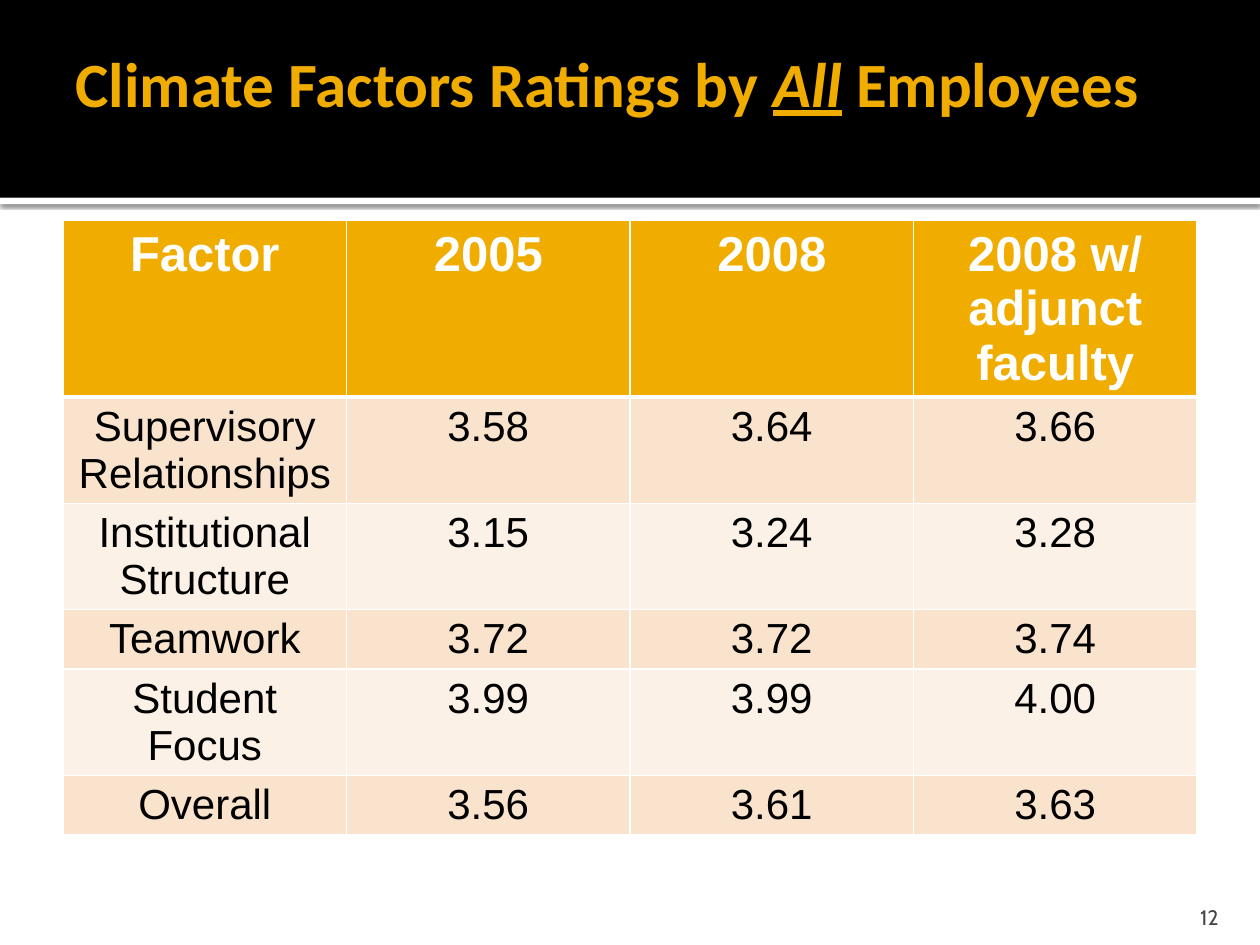
from dataclasses import dataclass

from lxml import etree
from pptx import Presentation
from pptx import util as u
from pptx.dml.color import RGBColor
from pptx.enum import shapes, text
from pptx.oxml import ns


@dataclass(frozen=True)
class Theme:
    black: str = "000000"
    white: str = "FFFFFF"
    gold: str = "F0AD00"
    band_dark: str = "F9E3CC"
    band_light: str = "FCF1E7"
    grey: str = "454545"
    title_font: str = "Calibri"
    table_font: str = "Arial"
    number_font: str = "Cabin"
    title_size: int = 36
    header_size: int = 28
    body_size: int = 24
    number_size: int = 12


TITLE = [("Climate Factors Ratings by ", False), ("All", True), (" Employees", False)]
RATINGS = [
    ("Factor", "2005", "2008", "2008 w/ adjunct faculty"),
    ("Supervisory Relationships", "3.58", "3.64", "3.66"),
    ("Institutional Structure", "3.15", "3.24", "3.28"),
    ("Teamwork", "3.72", "3.72", "3.74"),
    ("Student Focus", "3.99", "3.99", "4.00"),
    ("Overall", "3.56", "3.61", "3.63"),
]
# Row heights in grid units, by the number of text lines
HEADER, DOUBLE, SINGLE = 2.8, 1.68, 0.94
ROW_HEIGHTS = [HEADER, DOUBLE, DOUBLE, SINGLE, DOUBLE, SINGLE]


class SlideBuilder:
    """Places elements on a grid of 20 columns by 15 rows."""

    def __init__(self, deck, theme):
        self.theme = theme
        self.column = deck.slide_width / 20
        self.row = deck.slide_height / 15
        self.slide = deck.slides.add_slide(deck.slide_layouts[5])

    def place(self, column, row, width, height):
        return (round(column * self.column), round(row * self.row),
                round(width * self.column), round(height * self.row))

    def style(self, span, font, size, color, bold=False):
        span.font.name = font
        span.font.size = u.Pt(size)
        span.font.bold = bold
        span.font.color.rgb = RGBColor.from_string(color)

    def set_insets(self, frame, left, top, right, bottom):
        frame.margin_left, frame.margin_top = u.Inches(left), u.Inches(top)
        frame.margin_right, frame.margin_bottom = u.Inches(right), u.Inches(bottom)

    def band(self, area, color, shadow=False):
        box = self.slide.shapes.add_shape(shapes.MSO_SHAPE.RECTANGLE, *self.place(*area))
        box.shadow.inherit = False
        box.fill.solid()
        box.fill.fore_color.rgb = RGBColor.from_string(color)
        box.line.fill.background()
        if shadow:
            effects = box.element.spPr.find(ns.qn("a:effectLst"))
            outer = etree.SubElement(
                effects, ns.qn("a:outerShdw"), blurRad=str(u.Pt(2.5)),
                dist=str(u.Pt(0.8)), dir="5400000", algn="t", rotWithShape="0")
            tint = etree.SubElement(outer, ns.qn("a:srgbClr"), val=self.theme.black)
            etree.SubElement(tint, ns.qn("a:alpha"), val="60000")

    def title(self, area, parts):
        box = self.slide.shapes.title
        box.left, box.top, box.width, box.height = self.place(*area)
        box.element.getparent().append(box.element)  # in front of the bands
        frame = box.text_frame
        frame.word_wrap = True
        frame.auto_size = text.MSO_AUTO_SIZE.NONE
        frame.vertical_anchor = text.MSO_ANCHOR.MIDDLE
        self.set_insets(frame, 0.1, 0.05, 0.05, 0.66)
        para = frame.paragraphs[0]
        para.alignment = text.PP_ALIGN.LEFT
        for words, emphasis in parts:
            span = para.add_run()
            span.text = words
            self.style(span, self.theme.title_font, self.theme.title_size,
                       self.theme.gold, bold=True)
            span.font.italic = span.font.underline = emphasis

    def borders(self, cell, top=1, bottom=1):
        properties = cell._tc.get_or_add_tcPr()
        for side, width in zip("LRTB", (1, 1, top, bottom)):
            line = etree.SubElement(properties, ns.qn(f"a:ln{side}"), w=str(u.Pt(width)))
            fill = etree.SubElement(line, ns.qn("a:solidFill"))
            etree.SubElement(fill, ns.qn("a:srgbClr"), val=self.theme.white)

    def table(self, column, row, width, data, heights):
        theme = self.theme
        area = self.place(column, row, width, sum(heights))
        grid = self.slide.shapes.add_table(len(data), len(data[0]), *area).table
        grid.horz_banding = False
        for index, (values, height) in enumerate(zip(data, heights)):
            grid.rows[index].height = round(height * self.row)
            header = index == 0
            band = theme.band_dark if index % 2 else theme.band_light
            for position, value in enumerate(values):
                cell = grid.cell(index, position)
                self.borders(cell, top=3 if index == 1 else 1, bottom=3 if header else 1)
                cell.fill.solid()
                cell.fill.fore_color.rgb = RGBColor.from_string(theme.gold if header else band)
                cell.text_frame.text = value
                para = cell.text_frame.paragraphs[0]
                para.alignment = text.PP_ALIGN.CENTER
                self.style(para.runs[0], theme.table_font,
                           theme.header_size if header else theme.body_size,
                           theme.white if header else theme.black, bold=header)

    def page_number(self, area, number):
        box = self.slide.shapes.add_textbox(*self.place(*area))
        frame = box.text_frame
        frame.word_wrap = True
        frame.vertical_anchor = text.MSO_ANCHOR.BOTTOM
        self.set_insets(frame, 0.1, 0.05, 0.1, 0)
        frame.text = number
        para = frame.paragraphs[0]
        para.alignment = text.PP_ALIGN.RIGHT
        self.style(para.runs[0], self.theme.number_font, self.theme.number_size, self.theme.grey)


def main():
    deck = Presentation()
    deck.slide_width, deck.slide_height = u.Inches(10), u.Inches(7.5)
    theme = Theme()
    page = SlideBuilder(deck, theme)

    # Header band with a white edge
    page.band((0, 3.14, 20, 0.1), theme.white, shadow=True)
    page.band((0, 0, 20, 3.14), theme.black)
    page.title((1, 0.66, 18, 2.5), TITLE)

    # Ratings and page number
    page.table(1, 3.5, 18, RATINGS, ROW_HEIGHTS)
    page.page_number((17.94, 14.16, 1.6, 0.6), "12")

    deck.save("out.pptx")


if __name__ == "__main__":
    main()
